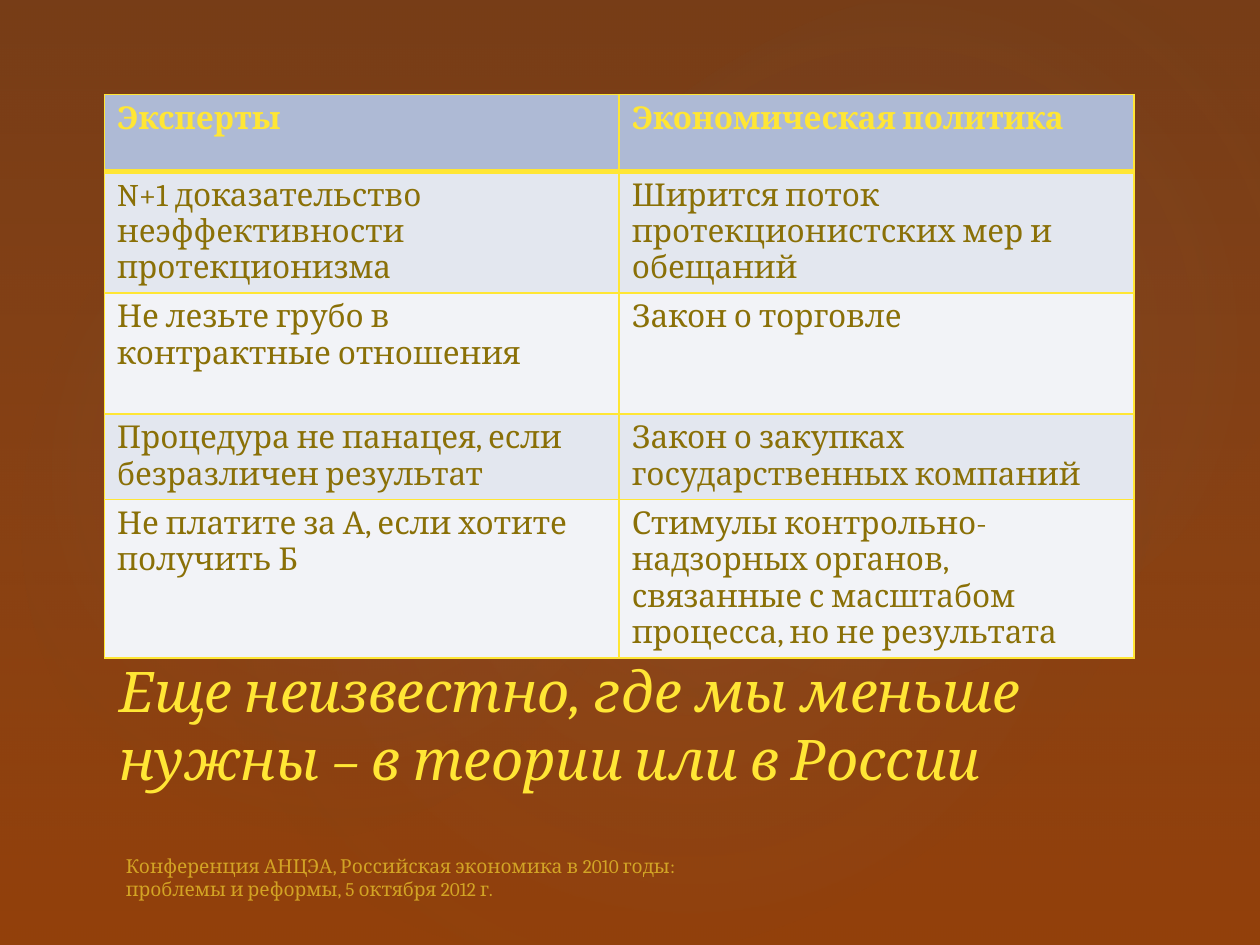
from lxml import etree
from pptx import Presentation
from pptx.dml.color import RGBColor
from pptx.enum.shapes import MSO_SHAPE as Shape
from pptx.enum.text import MSO_ANCHOR as Anchor
from pptx.oxml import parse_xml
from pptx.oxml.ns import nsdecls, qn
from pptx.util import Inches, Pt

BACK = RGBColor(0x99, 0x3D, 0x00)
DARK = RGBColor(0x3C, 0x3E, 0x42)
SLATE = RGBColor(0x57, 0x5F, 0x6D)
GLOW = RGBColor(0xAD, 0xB0, 0xB5)
GOLD = RGBColor(0xFF, 0xE6, 0x35)
OLIVE = RGBColor(0x8A, 0x70, 0x07)
HEAD = RGBColor(0xAE, 0xBA, 0xD5)
BANDS = RGBColor(0xE3, 0xE7, 0xEF), RGBColor(0xF2, 0xF3, 0xF7)

FACE = "Cambria"
HEADER = {"name": FACE, "size": Pt(18), "bold": True, "color": GOLD}
BODY = {"name": FACE, "size": Pt(18), "bold": False, "color": OLIVE}
TITLE = {"name": FACE, "size": Pt(32), "italic": True, "color": GOLD}
FOOT = {"name": FACE, "size": Pt(11), "color": GOLD}

ROWS = [
    ("Эксперты", "Экономическая политика"),
    ("N+1 доказательство неэффективности протекционизма",
     "Ширится поток протекционистских мер и обещаний"),
    ("Не лезьте грубо в контрактные отношения", "Закон о торговле"),
    ("Процедура не панацея, если безразличен результат",
     "Закон о закупках государственных компаний"),
    ("Не платите за А, если хотите получить Б",
     "Стимулы контрольно-надзорных органов, связанные с масштабом "
     "процесса, но не результата"),
]
HEIGHTS = 0.61, 0.96, 0.96, 0.68, 1.25
GLOWS = [
    ((1.5, 1.14, 7.92, 6.24), 328.7, 7),
    ((-0.3, 1.28, 6.06, 4.9), 294.3, 8),
    ((3.58, 0.13, 7.09, 5.2), 328.7, 8),
]


def style(run, form):
    for key, value in form.items():
        if key == "color":
            run.font.color.rgb = value
        else:
            setattr(run.font, key, value)


def write(frame, text, form):
    frame.word_wrap = True
    run = frame.paragraphs[0].add_run()
    run.text = text
    style(run, form)
    return run


def shade(slide, kind, box, stops, tail, turn=0):
    shape = slide.shapes.add_shape(kind, *map(Inches, box))
    shape.shadow.inherit = False
    shape.line.fill.background()
    shape.rotation = turn
    marks = "".join(
        f'<a:gs pos="{pos * 1000}"><a:srgbClr val="{color}">'
        f'<a:alpha val="{alpha * 1000}"/></a:srgbClr></a:gs>'
        for pos, color, alpha in stops)
    fill = parse_xml(f'<a:gradFill {nsdecls("a")} rotWithShape="1">'
                     f'<a:gsLst>{marks}</a:gsLst>{tail}</a:gradFill>')
    shape._element.spPr.find(qn("a:prstGeom")).addnext(fill)


def backdrop(slide, box):
    fill = slide.background.fill
    fill.solid()
    fill.fore_color.rgb = BACK
    shade(slide, Shape.RECTANGLE, box, [(0, DARK, 36), (100, SLATE, 10)],
          '<a:lin ang="5400000" scaled="0"/>')
    round_path = ('<a:path path="circle"><a:fillToRect l="50000" t="50000" '
                  'r="50000" b="50000"/></a:path>')
    for spot, turn, alpha in GLOWS:
        shade(slide, Shape.OVAL, spot, [(0, GLOW, alpha), (58, SLATE, 0)],
              round_path, turn)


def border(cell, widths):
    props = cell._tc.get_or_add_tcPr()
    for spot, (side, width) in enumerate(widths.items()):
        line = parse_xml(
            f'<a:ln{side} {nsdecls("a")} w="{Pt(width)}"><a:solidFill>'
            f'<a:srgbClr val="{GOLD}"/></a:solidFill></a:ln{side}>')
        props.insert(spot, line)


def grid(slide, box):
    table = slide.shapes.add_table(len(ROWS), 2, *map(Inches, box)).table
    for col in table.columns:
        col.width = Inches(box[2] / 2)
    for i, (texts, height) in enumerate(zip(ROWS, HEIGHTS)):
        table.rows[i].height = Inches(height)
        for j, text in enumerate(texts):
            cell = table.cell(i, j)
            cell.fill.solid()
            cell.fill.fore_color.rgb = BANDS[(i - 1) % 2] if i else HEAD
            write(cell.text_frame, text, BODY if i else HEADER)
            border(cell, {"L": 1, "R": 1, "T": 3 if i == 1 else 1,
                          "B": 1 if i else 3})


def title(slide, box):
    frame = slide.shapes.add_textbox(*map(Inches, box)).text_frame
    frame.vertical_anchor = Anchor.BOTTOM
    write(frame, "Еще неизвестно, где мы меньше нужны – в теории или в России",
          TITLE)


def footer(slide, box):
    frame = slide.shapes.add_textbox(*map(Inches, box)).text_frame
    run = write(frame, "Конференция АНЦЭА, Российская экономика в 2010 годы: "
                "проблемы и реформы, 5 октября 2012 г.", FOOT)
    color = run._r.rPr.find(".//" + qn("a:srgbClr"))
    etree.SubElement(color, qn("a:alpha")).set("val", "60000")


def main():
    deck = Presentation()
    deck.slide_width, deck.slide_height = Inches(10), Inches(7.5)
    slide = deck.slides.add_slide(deck.slide_layouts[6])
    backdrop(slide, (0, 0, 10, 7.5))
    grid(slide, (0.83, 0.75, 8.17, sum(HEIGHTS)))
    title(slide, (0.85, 5.33, 8.25, 1))
    footer(slide, (0.9, 6.73, 5, 0.4))
    deck.save("out.pptx")


if __name__ == "__main__":
    main()
